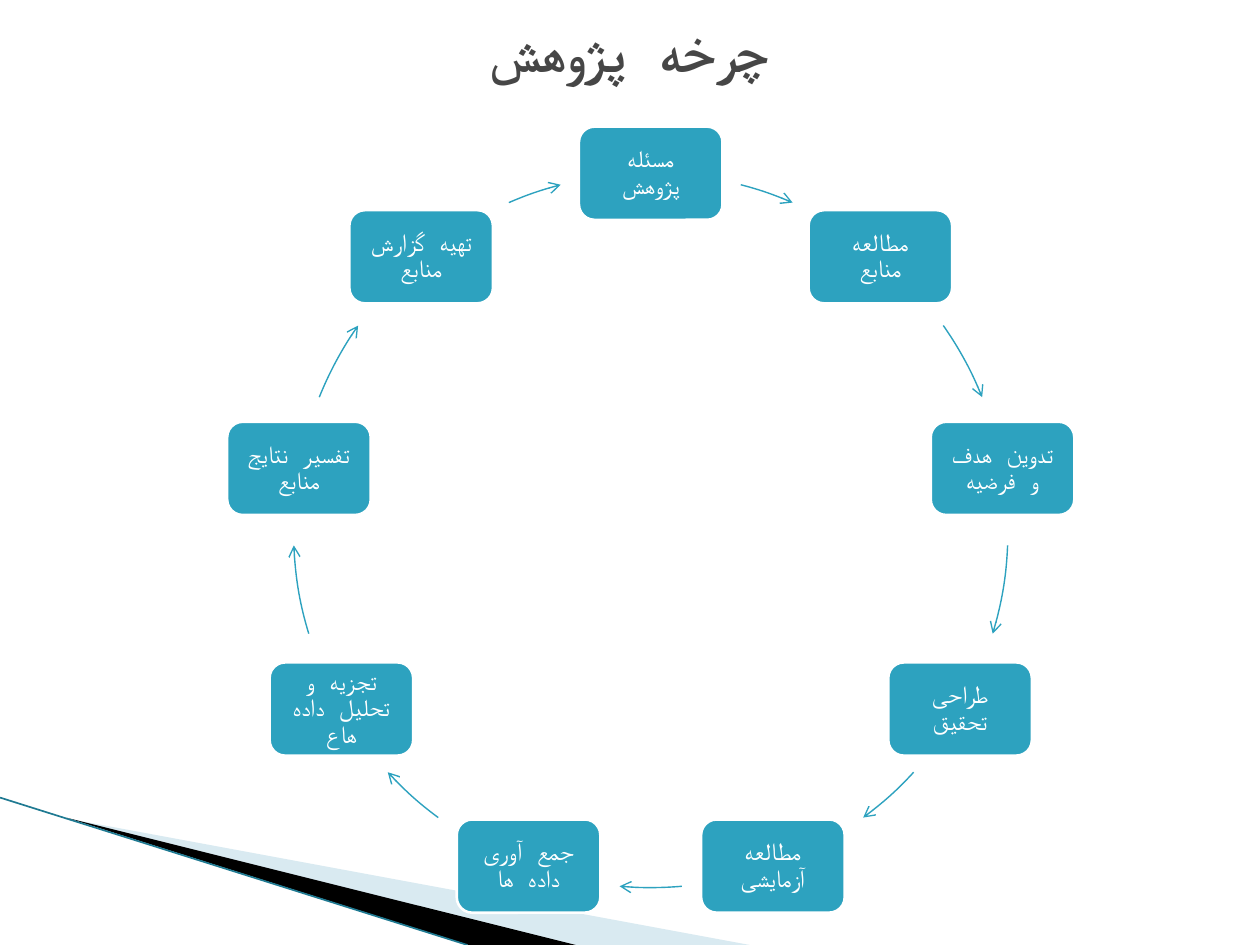
"""Build the research cycle slide: nine steps on a circle joined by arc arrows."""
from math import cos, radians, sin

from lxml import etree
from pptx import Presentation
from pptx.dml.color import RGBColor
from pptx.enum.shapes import MSO_CONNECTOR, MSO_SHAPE
from pptx.enum.text import MSO_ANCHOR, PP_ALIGN
from pptx.oxml.ns import qn
from pptx.util import Inches, Pt

FONT = "Noto Sans Mono"
TEAL = "2DA2BF"


def paint(fmt, color):
    fmt.solid()
    fmt.fore_color.rgb = RGBColor.from_string(color)


def write(s, text, size, color, bold=False):
    tf = s.text_frame
    tf.text = text
    tf.word_wrap = True
    tf.vertical_anchor = MSO_ANCHOR.MIDDLE
    p = tf.paragraphs[0]
    p.alignment = PP_ALIGN.CENTER
    p._p.get_or_add_pPr().set("rtl", "1")
    r = p.runs[0]
    r.font.size, r.font.bold, r.font.name = Pt(size), bold, FONT
    paint(r.font.fill, color)
    etree.SubElement(r._r.get_or_add_rPr(), qn("a:cs"), typeface=FONT)
    return tf, p


prs = Presentation()
prs.slide_width, prs.slide_height = Inches(10), Inches(7.5)
W, H = prs.slide_width, prs.slide_height
U = W / 100
slide = prs.slides.add_slide(prs.slide_layouts[5])
shapes = slide.shapes

wedges = [
    ("A0CBDC", [(5.5, 65), (59.5, 75), (45.6, 75)]),
    ("000000", [(5.3, 64.9), (45.7, 75), (37.2, 75)]),
]
for color, points in wedges:
    corners = [(round(x * U), round(y * U)) for x, y in points]
    builder = shapes.build_freeform(*corners[0])
    builder.add_line_segments(corners[1:], close=True)
    s = builder.convert_to_shape()
    s.shadow.inherit = False
    paint(s.fill, color)
    s.line.fill.background()
    if color != "000000":
        rgb = s.fill._xPr.find(qn("a:solidFill"))[0]
        etree.SubElement(rgb, qn("a:alpha"), val="40000")

edge = shapes.add_connector(
    MSO_CONNECTOR.STRAIGHT, 0, round(63.3 * U), round(37.1 * U), H)
paint(edge.line.fill, "1F7A92")
edge.line.width = Pt(0.95)
etree.SubElement(edge._element.spPr, qn("a:effectLst"))

steps = [
    "مسئله پژوهش", "مطالعه منابع", "تدوین هدف و فرضیه",
    "طراحی تحقیق", "مطالعه آزمایشی", "جمع آوری داده ها",
    "تجزیه و تحلیل داده هاع", "تفسیر نتایج منابع", "تهیه گزارش منابع",
]
right_arcs = [(14.6, 23.4), (55, 68.1), (92.4, 106.8), (132.6, 143.5)]
left_arcs = [(360 - end, 360 - start) for start, end in reversed(right_arcs)]
arcs = right_arcs + [(175, 185)] + left_arcs

cx, cy, radius = 51.65 * U, 42.1 * U, 28.35 * U
box_w, box_h = 11.4 * U, 7.4 * U
for i, (step, arc) in enumerate(zip(steps, arcs)):
    angle = radians(i * 360 / len(steps))
    x, y = cx + radius * sin(angle), cy - radius * cos(angle)
    s = shapes.add_shape(
        MSO_SHAPE.ROUNDED_RECTANGLE, round(x - box_w / 2),
        round(y - box_h / 2), round(box_w), round(box_h))
    s.shadow.inherit = False
    paint(s.fill, TEAL)
    paint(s.line.fill, "FFFFFF")
    s.line.width = Pt(1.5)
    tf, p = write(s, step, 14, "FFFFFF")
    tf.margin_left = tf.margin_right = round(U)
    tf.margin_top = tf.margin_bottom = round(U)
    p.line_spacing = 0.9

    s = shapes.add_shape(
        MSO_SHAPE.ARC, round(cx - radius), round(cy - radius),
        round(2 * radius), round(2 * radius))
    s.shadow.inherit = False
    s.fill.background()
    for k, degrees in enumerate(arc):
        s.adjustments[k] = (degrees - 90) % 360 * 0.6
    paint(s.line.fill, TEAL)
    s.line.width = Pt(0.79)
    etree.SubElement(s.line._get_or_add_ln(), qn("a:tailEnd"), type="arrow")

title = shapes.title
title.left, title.top = round(5 * U), round(3 * U)
title.width, title.height = round(90 * U), round(2 * U)
write(title, "چرخه پژوهش", 32, "464646", bold=True)

prs.save("out.pptx")
